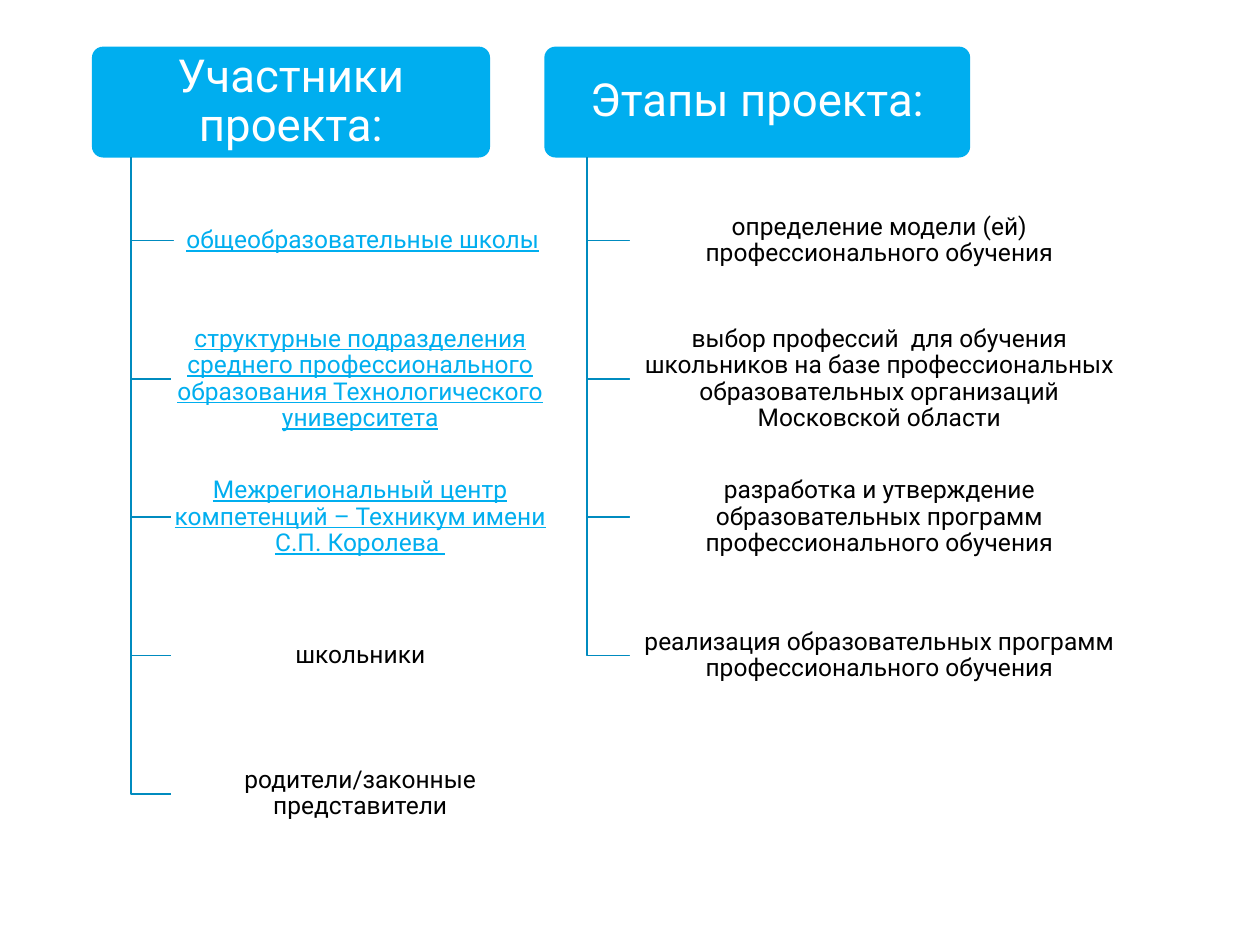
import dataclasses

import lxml.etree
import pptx
import pptx.dml.color
import pptx.enum.shapes
import pptx.enum.text
import pptx.oxml.ns
import pptx.util

Inches = pptx.util.Inches


@dataclasses.dataclass(frozen=True)
class Theme:
    font: str = "Roboto"
    accent: str = "00AEEF"
    branch: str = "008BBF"
    white: str = "FFFFFF"
    black: str = "000000"
    heading_size: int = 26
    item_size: int = 14
    item_opacity: int = 90


def rgb(value):
    return pptx.dml.color.RGBColor.from_string(value)


class HierarchySlide:
    TOP = 0.37
    BOX_HEIGHT = 0.88
    FIRST_ITEM_TOP = 1.47
    ITEM_STEP = 1.0975

    def __init__(self, slide, theme):
        self.slide = slide
        self.theme = theme

    def box(self, left, top, width, text, fill, color, size, margin, underline=False):
        shape = self.slide.shapes.add_shape(
            pptx.enum.shapes.MSO_SHAPE.ROUNDED_RECTANGLE,
            Inches(left), Inches(top), Inches(width), Inches(self.BOX_HEIGHT),
        )
        shape.adjustments[0] = 0.1
        shape.shadow.inherit = False
        shape.fill.solid()
        shape.fill.fore_color.rgb = rgb(fill)
        shape.line.fill.background()
        frame = shape.text_frame
        frame.word_wrap = True
        frame.vertical_anchor = pptx.enum.text.MSO_ANCHOR.MIDDLE
        frame.margin_left = frame.margin_right = Inches(margin)
        frame.margin_top = frame.margin_bottom = Inches(margin)
        frame.text = text
        paragraph = frame.paragraphs[0]
        paragraph.alignment = pptx.enum.text.PP_ALIGN.CENTER
        paragraph.line_spacing = 0.9
        font = paragraph.runs[0].font
        font.name = self.theme.font
        font.size = pptx.util.Pt(size)
        font.color.rgb = rgb(color)
        if underline:
            font.underline = True
        return shape

    def heading(self, left, width, text):
        theme = self.theme
        self.box(left, self.TOP, width, text, theme.accent, theme.white,
                 theme.heading_size, 0.02)

    def item(self, left, top, width, text, highlighted):
        theme = self.theme
        color = theme.accent if highlighted else theme.black
        shape = self.box(left, top, width, text, theme.white, color,
                         theme.item_size, 0, highlighted)
        fill_color = shape.fill._xPr.find(".//" + pptx.oxml.ns.qn("a:srgbClr"))
        alpha = lxml.etree.SubElement(fill_color, pptx.oxml.ns.qn("a:alpha"))
        alpha.set("val", str(theme.item_opacity * 1000))

    def branch(self, trunk, end, middle):
        start = self.TOP + self.BOX_HEIGHT
        builder = self.slide.shapes.build_freeform(Inches(trunk), Inches(start))
        builder.add_line_segments(
            [(Inches(trunk), Inches(middle)), (Inches(end), Inches(middle))],
            close=False,
        )
        shape = builder.convert_to_shape()
        shape.shadow.inherit = False
        shape.fill.background()
        shape.line.color.rgb = rgb(self.theme.branch)
        shape.line.width = pptx.util.Pt(1)

    def column(self, left, width, heading, trunk, item_width, items):
        self.heading(left, width, heading)
        for index, (item_left, text, highlighted) in enumerate(items):
            top = self.FIRST_ITEM_TOP + index * self.ITEM_STEP
            self.branch(trunk, item_left, top + self.BOX_HEIGHT / 2)
            self.item(item_left, top, item_width, text, highlighted)


PARTICIPANTS = [
    (1.38, "общеобразовательные школы", True),
    (1.36, "структурные подразделения среднего профессионального "
           "образования Технологического университета", True),
    (1.36, "Межрегиональный центр компетенций – Техникум имени С.П. Королева ", True),
    (1.36, "школьники", False),
    (1.36, "родители/законные представители", False),
]

STAGES = [
    (5, "определение модели (ей) профессионального обучения", False),
    (5, "выбор профессий  для обучения школьников на базе профессиональных "
        "образовательных организаций Московской области", False),
    (5, "разработка и утверждение образовательных программ "
        "профессионального обучения", False),
    (5, "реализация образовательных программ профессионального обучения", False),
]


def main():
    presentation = pptx.Presentation()
    presentation.slide_width = Inches(10)
    presentation.slide_height = Inches(7.5)
    slide = presentation.slides.add_slide(presentation.slide_layouts[6])
    hierarchy = HierarchySlide(slide, Theme())
    hierarchy.column(0.73, 3.16, "Участники проекта:", 1.04, 3, PARTICIPANTS)
    hierarchy.column(4.32, 3.38, "Этапы проекта:", 4.66, 3.96, STAGES)
    presentation.save("out.pptx")


if __name__ == "__main__":
    main()
